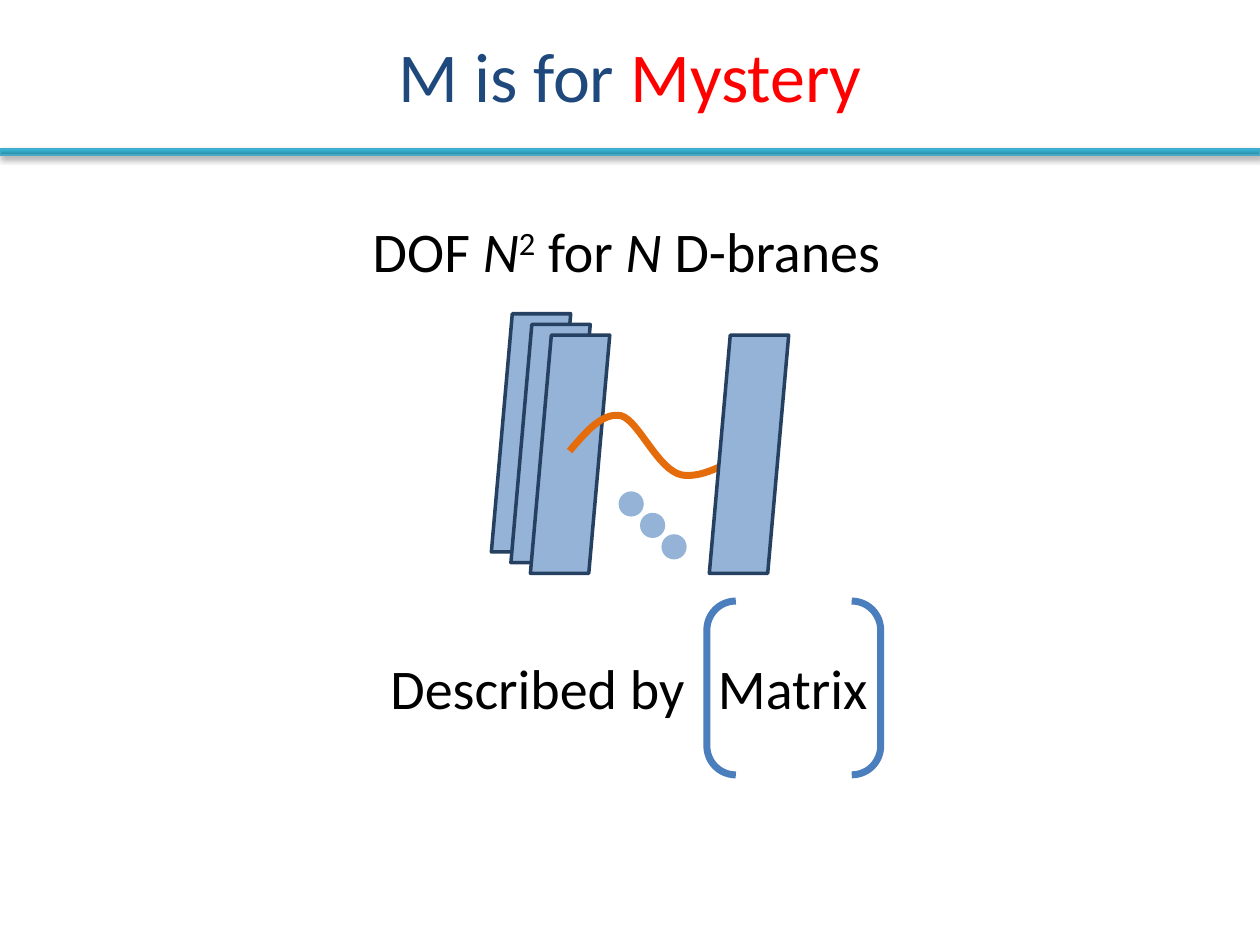
from copy import deepcopy

from lxml import etree
from pptx import Presentation
from pptx import util as u
from pptx.dml.color import RGBColor
from pptx.enum import shapes, text
from pptx.oxml.ns import qn

BLACK, NAVY, RED = "000000", "1F497D", "FF0000"
BRANE, BRANE_EDGE = "95B3D7", "254061"
STRING, BRACKET = "E46C0A", "4B7EBC"
BAR_STOPS = [(0, "2A88A2"), (0.8, "37B1D2"), (1, "34B4D6")]


def colour(value):
    return RGBColor.from_string(value)


def bezier(start, first, second, end, steps=16):
    for step in range(1, steps + 1):
        t = step / steps
        weights = ((1 - t) ** 3, 3 * t * (1 - t) ** 2, 3 * t * t * (1 - t), t ** 3)
        points = (start, first, second, end)
        yield tuple(sum(w * p[axis] for w, p in zip(weights, points)) for axis in (0, 1))


class Deck:
    font = "Calibri"

    def __init__(self, width, height):
        self.presentation = Presentation()
        self.presentation.slide_width = u.Inches(width)
        self.presentation.slide_height = u.Inches(height)
        self.slide = self.presentation.slides.add_slide(self.presentation.slide_layouts[6])

    def style(self, shape, fill=None, line=None, weight=1):
        shape.shadow.inherit = False
        for part, value in ((shape.fill, fill), (shape.line.fill, line)):
            if value:
                part.solid()
                part.fore_color.rgb = colour(value)
            else:
                part.background()
        if line:
            shape.line.width = u.Pt(weight)
        return shape

    def shape(self, kind, box, adjust=None, **look):
        shape = self.slide.shapes.add_shape(kind, *map(u.Inches, box))
        if adjust is not None:
            shape.adjustments[0] = adjust
        return self.style(shape, **look)

    def bar(self, box, stops, line):
        shape = self.shape(shapes.MSO_SHAPE.RECTANGLE, box, line=line, weight=0.75)
        shape.fill.gradient()
        shape.fill.gradient_angle = 90
        properties = shape._element.spPr
        stop_list = properties.find(".//" + qn("a:gsLst"))
        stop_list.append(deepcopy(stop_list[-1]))
        for stop, (position, value) in zip(shape.fill.gradient_stops, stops):
            stop.position = position
            stop.color.rgb = colour(value)
        shadow = etree.SubElement(
            properties.find(qn("a:effectLst")), qn("a:outerShdw"),
            blurRad=str(u.Pt(3.1)), dist=str(u.Pt(1.8)), dir="5400000", rotWithShape="0")
        black = etree.SubElement(shadow, qn("a:srgbClr"), val=BLACK)
        etree.SubElement(black, qn("a:alpha"), val="35000")

    def curve(self, start, segments, line, weight):
        points = [start]
        for segment in segments:
            points.extend(bezier(points[-1], *segment))
        corners = [tuple(map(u.Inches, point)) for point in points]
        builder = self.slide.shapes.build_freeform(*corners[0])
        builder.add_line_segments(corners[1:], close=False)
        return self.style(builder.convert_to_shape(), line=line, weight=weight)

    def text(self, box, runs, size=32, wrap=False, **format_values):
        shape = self.slide.shapes.add_textbox(*map(u.Inches, box))
        frame = shape.text_frame
        frame.word_wrap = wrap
        frame.auto_size = text.MSO_AUTO_SIZE.NONE if wrap else text.MSO_AUTO_SIZE.SHAPE_TO_FIT_TEXT
        frame.vertical_anchor = format_values.get("anchor", text.MSO_ANCHOR.TOP)
        paragraph = frame.paragraphs[0]
        paragraph.alignment = format_values.get("align", text.PP_ALIGN.LEFT)
        for words, changes in runs:
            run = paragraph.add_run()
            run.text = words
            values = {"name": self.font, "size": u.Pt(size), "italic": changes.get("italic", False)}
            for name, value in values.items():
                setattr(run.font, name, value)
            run.font.color.rgb = colour(changes.get("color", BLACK))
            if changes.get("superscript"):
                run._r.get_or_add_rPr().set("baseline", "30000")
        return shape

    def brane(self, left, top):
        return self.shape(shapes.MSO_SHAPE.PARALLELOGRAM, (left, top, 0.63, 1.89), 0.264,
                          fill=BRANE, line=BRANE_EDGE, weight=2)

    def group(self, members):
        return self.slide.shapes.add_group_shape(members)


def main():
    deck = Deck(10, 7.5)
    deck.bar((0, 1.18, 10, 0.05), BAR_STOPS, "46AAC5")
    deck.text((0, 0, 10, 1.18), [("M is for ", {"color": NAVY}), ("Mystery", {"color": RED})],
              size=40, wrap=True, anchor=text.MSO_ANCHOR.MIDDLE, align=text.PP_ALIGN.CENTER)

    brane_top = 2.66
    deck.group([deck.brane(4.21 - 0.31 * i / 2, brane_top - 0.17 * i / 2) for i in (2, 1, 0)])
    deck.curve((4.52, 3.58), [
        ((4.65, 3.43), (4.78, 3.27), (4.93, 3.3)),
        ((5.07, 3.34), (5.22, 3.73), (5.41, 3.77)),
        ((5.59, 3.8), (5.81, 3.66), (6.03, 3.52)),
    ], STRING, 4)
    deck.brane(5.63, brane_top)

    deck.text((2.86, 1.67, 4.29, 0.64), [
        ("DOF ", {}), ("N", {"italic": True}), ("2", {"superscript": True}),
        (" for ", {}), ("N ", {"italic": True}), ("D-branes", {})])

    deck.group([
        deck.shape(shapes.MSO_SHAPE.DOUBLE_BRACKET, (5.61, 4.77, 1.38, 1.38),
                   line=BRACKET, weight=4),
        deck.text((5.6, 5.14, 1.4, 0.64), [("Matrix", {})]),
        deck.text((3, 5.14, 2.56, 0.64), [("Described by", {})]),
    ])

    for i in range(3):
        deck.shape(shapes.MSO_SHAPE.OVAL, (4.91 + 0.17 * i, 3.9 + 0.17 * i, 0.2, 0.2), fill=BRANE)

    deck.presentation.save("out.pptx")


if __name__ == "__main__":
    main()
